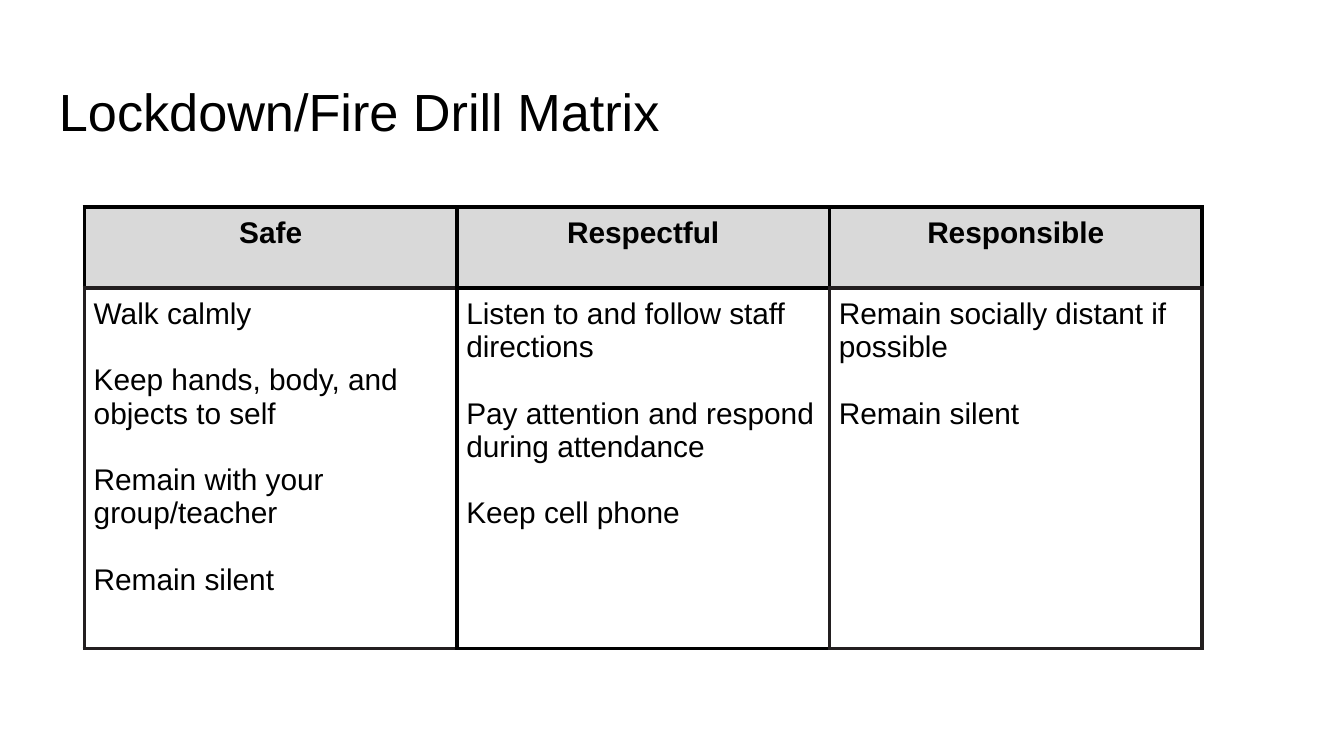
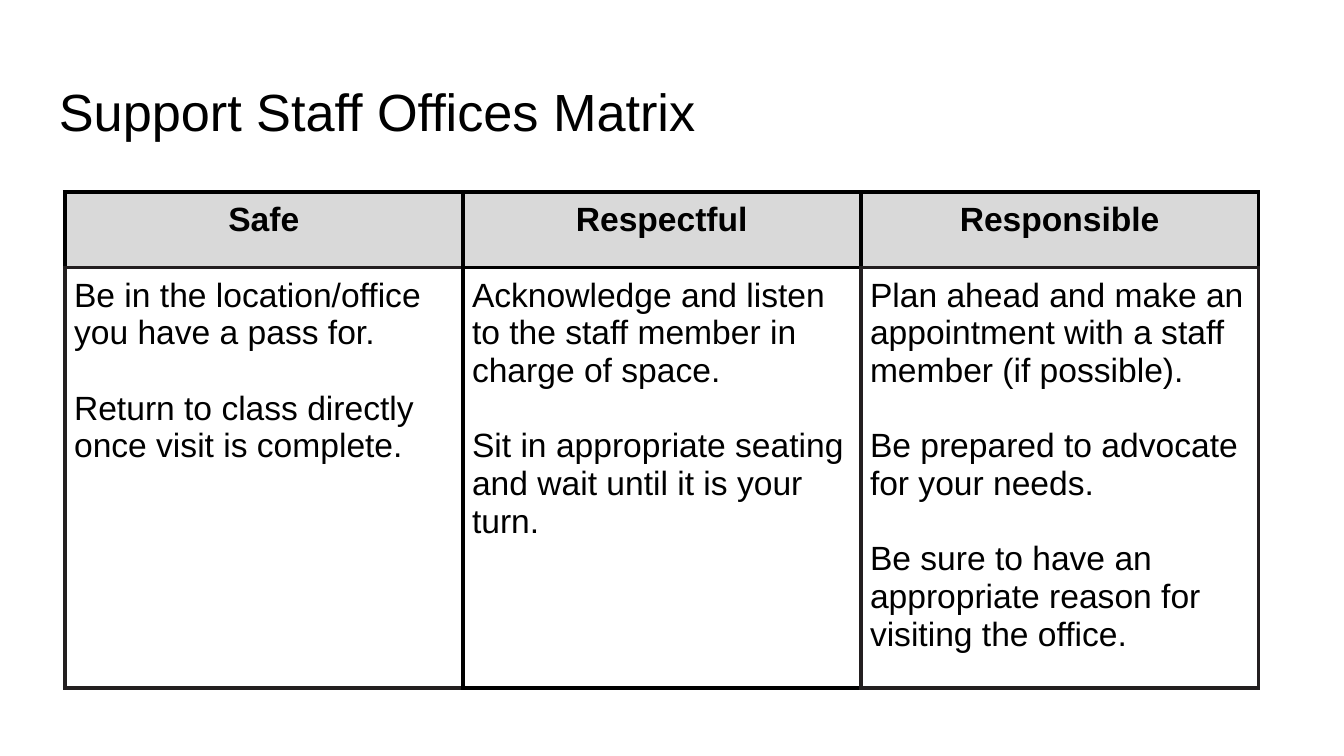
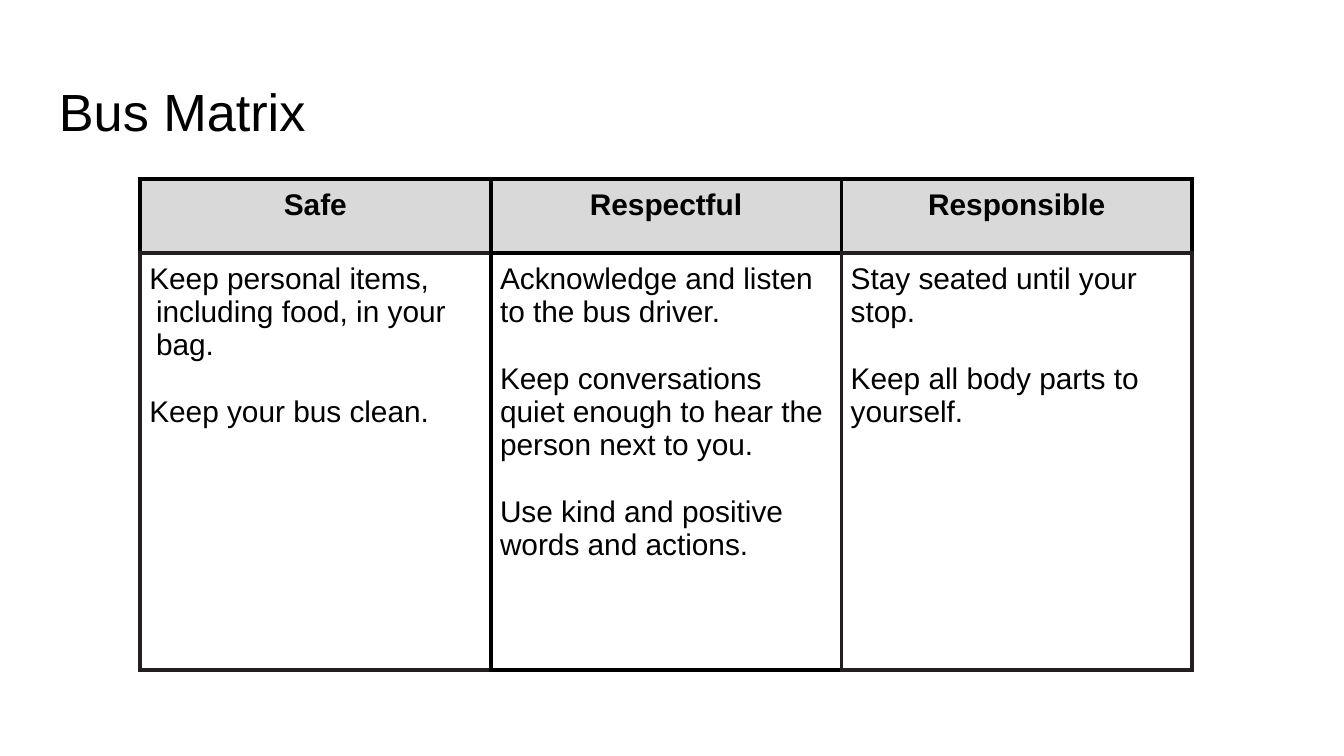
import pptx
import pptx.dml.color
import pptx.enum.text
import pptx.oxml
import pptx.oxml.ns
import pptx.util

Pt = pptx.util.Pt
Align = pptx.enum.text.PP_ALIGN
COLORS = {"ink": "000000", "charcoal": "231F20", "header": "D9D9D9"}
FONT = "Arial"
LINE_HEIGHT = 1.12
CELL_MARGIN = 5
TITLE_MARGIN = 7.2
BORDER_WIDTH = 2.25
SIDES = ("lnL", "lnR", "lnT", "lnB")
HEADINGS = ("Safe", "Respectful", "Responsible")
HEADING_BORDERS = (
    ("ink", "ink", "ink", "charcoal"),
    ("ink", "ink", "ink", "ink"),
    ("ink", "ink", "ink", "charcoal"),
)
BODY_BORDERS = (
    ("charcoal", "ink", "charcoal", "charcoal"),
    ("ink", "charcoal", "ink", "ink"),
    ("charcoal", "charcoal", "charcoal", "charcoal"),
)

MATRICES = [
    {
        "title": "Lockdown/Fire Drill Matrix",
        "left": 45.2, "top": 111, "column": 199.6, "rows": (43.4, 193),
        "size": 16,
        "rules": (
            ("Walk calmly",
             "Keep hands, body, and objects to self",
             "Remain with your group/teacher",
             "Remain silent"),
            ("Listen to and follow staff directions",
             "Pay attention and respond during attendance",
             "Keep cell phone"),
            ("Remain socially distant if possible",
             "Remain silent"),
        ),
    },
    {
        "title": "Support Staff Offices Matrix",
        "left": 34.7, "top": 102.8, "column": 213.2, "rows": (40.5, 225.2),
        "size": 18,
        "rules": (
            ("Be in the location/office you have a pass for.",
             "Return to class directly once visit is complete."),
            ("Acknowledge and listen to the staff member in charge of space.",
             "Sit in appropriate seating and wait until it is your turn."),
            ("Plan ahead and make an appointment with a staff member (if possible).",
             "Be prepared to advocate for your needs.",
             "Be sure to have an appropriate reason for visiting the office."),
        ),
    },
    {
        "title": "Bus Matrix",
        "left": 75, "top": 95.9, "column": 187.9, "rows": (39.8, 223.2),
        "size": 16, "hangs": (3.6, 0, 0),
        "rules": (
            ("Keep personal items, including food, in your bag.",
             "Keep your bus clean."),
            ("Acknowledge and listen to the bus driver.",
             "Keep conversations quiet enough to hear the person next to you.",
             "Use kind and positive words and actions."),
            ("Stay seated until your stop.",
             "Keep all body parts to yourself."),
        ),
    },
]


def set_margins(holder, margin):
    """Give a text frame or table cell the same margin on every side."""
    holder.margin_left = holder.margin_right = Pt(margin)
    holder.margin_top = holder.margin_bottom = Pt(margin)


def write_text(frame, texts, size, bold=False, align=Align.LEFT, hang=0):
    """Write one paragraph per text, a line height apart."""
    for index, text in enumerate(texts):
        para = frame.add_paragraph() if index else frame.paragraphs[0]
        para.alignment = align
        if index:
            para.space_before = Pt(round(size * LINE_HEIGHT, 1))
        if hang:
            properties = para._p.get_or_add_pPr()
            properties.set("marL", str(Pt(hang)))
            properties.set("indent", str(-Pt(hang)))
        span = para.add_run()
        span.text = text
        span.font.name = FONT
        span.font.size = Pt(size)
        span.font.bold = bold
        span.font.color.rgb = pptx.dml.color.RGBColor.from_string(COLORS["ink"])


def add_title(page, text):
    """Add the slide title."""
    box = page.shapes.add_textbox(Pt(24.5), Pt(35), Pt(671), Pt(45))
    frame = box.text_frame
    frame.word_wrap = True
    set_margins(frame, TITLE_MARGIN)
    write_text(frame, [text], size=28)


def set_borders(cell, color_names):
    """Draw the left, right, top and bottom borders of a cell."""
    properties = cell._tc.get_or_add_tcPr()
    namespace = pptx.oxml.ns.nsdecls("a")
    for side, name in zip(SIDES, color_names):
        properties.append(pptx.oxml.parse_xml(
            f'<a:{side} {namespace} w="{Pt(BORDER_WIDTH)}"><a:solidFill>'
            f'<a:srgbClr val="{COLORS[name]}"/></a:solidFill></a:{side}>'))


def fill_cell(cell, texts, borders, fill=None, **text_format):
    """Set the text, borders and fill of a cell."""
    set_margins(cell, CELL_MARGIN)
    set_borders(cell, borders)
    if fill:
        cell.fill.solid()
        cell.fill.fore_color.rgb = pptx.dml.color.RGBColor.from_string(COLORS[fill])
    else:
        cell.fill.background()
    write_text(cell.text_frame, texts, **text_format)


def add_matrix(page, matrix):
    """Add the table of expected behaviours."""
    count = len(HEADINGS)
    table = page.shapes.add_table(
        2, count, Pt(matrix["left"]), Pt(matrix["top"]),
        Pt(matrix["column"] * count), Pt(sum(matrix["rows"]))).table
    table.first_row = table.horz_banding = False
    for row, height in zip(table.rows, matrix["rows"]):
        row.height = Pt(height)
    hangs = matrix.get("hangs", (0,) * count)
    for index, heading in enumerate(HEADINGS):
        table.columns[index].width = Pt(matrix["column"])
        fill_cell(table.cell(0, index), [heading], HEADING_BORDERS[index],
                  fill="header", size=matrix["size"], bold=True, align=Align.CENTER)
        fill_cell(table.cell(1, index), matrix["rules"][index], BODY_BORDERS[index],
                  size=matrix["size"], hang=hangs[index])


def main():
    """Build the deck of behaviour matrices."""
    deck = pptx.Presentation()
    deck.slide_width, deck.slide_height = Pt(720), Pt(405)
    for matrix in MATRICES:
        page = deck.slides.add_slide(deck.slide_layouts[6])
        add_title(page, matrix["title"])
        add_matrix(page, matrix)
    deck.save("out.pptx")


if __name__ == "__main__":
    main()
